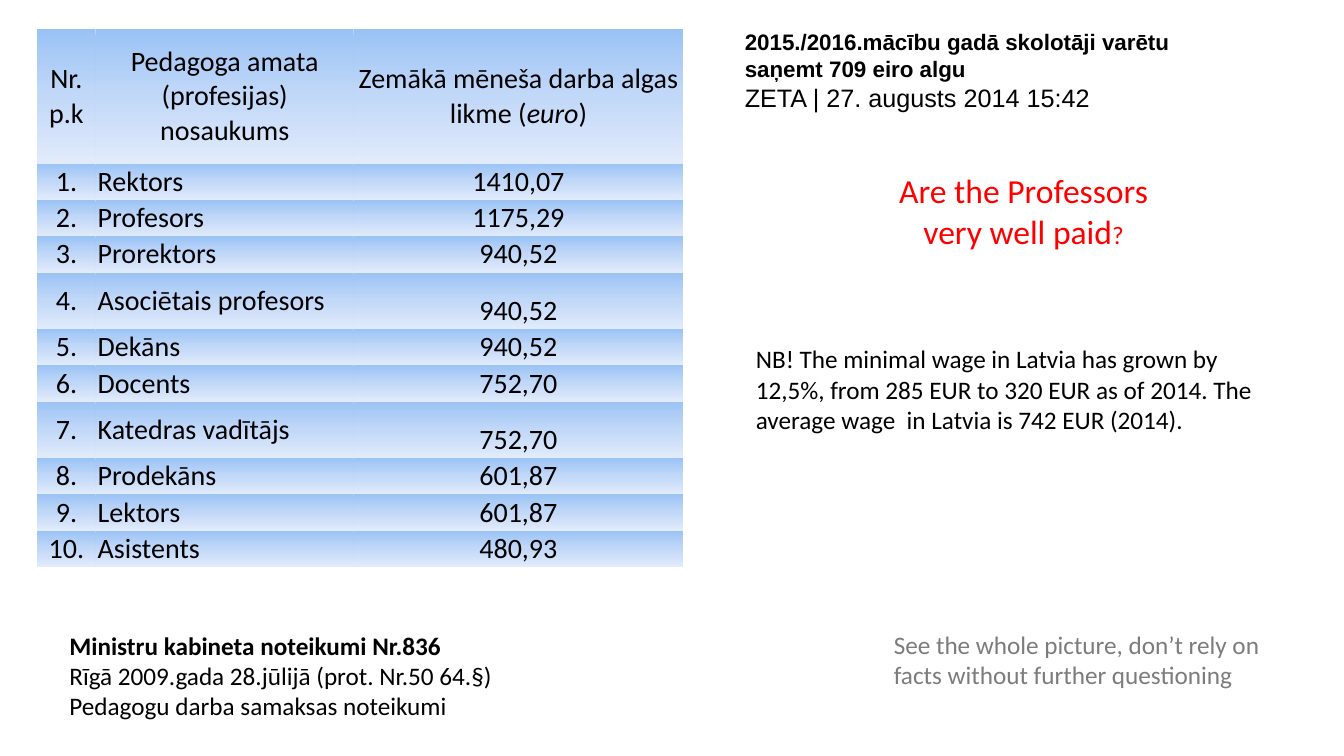
from pptx import Presentation
from pptx.dml.color import RGBColor
from pptx.enum.shapes import MSO_SHAPE as Preset
from pptx.enum.text import MSO_ANCHOR as Anchor, MSO_AUTO_SIZE as AutoSize, PP_ALIGN as Align
from pptx.oxml import parse_xml
from pptx.oxml.ns import nsdecls, qn
from pptx.util import Pt

PLAIN_TABLE = "{2D5ABB26-0587-4C30-8999-92F81FD0307C}"
CELL_STOPS = ((0, "9AC3F5"), (50, "C2D8F8"), (100, "E1EBFB"))
POSITIONS = (
    ("Rektors", "1410,07"),
    ("Profesors", "1175,29"),
    ("Prorektors", "940,52"),
    ("Asociētais profesors", "940,52"),
    ("Dekāns", "940,52"),
    ("Docents", "752,70"),
    ("Katedras vadītājs", "752,70"),
    ("Prodekāns", "601,87"),
    ("Lektors", "601,87"),
    ("Asistents", "480,93"),
)
TALL_ROWS = (4, 7)


def color(hex_value):
    return RGBColor.from_string(hex_value)


def apply_formats(target, formats):
    for name, value in formats.items():
        setattr(target, name, value)


class SlideBuilder:
    font_name = "Calibri"
    text_size = 18
    text_color = "000000"

    def __init__(self, slide):
        self.slide = slide

    def place(self, shape, box):
        names = ("left", "top", "width", "height")
        apply_formats(shape, dict(zip(names, map(Pt, box))))

    def fill_text(self, frame, paragraphs, align=Align.LEFT, anchor=Anchor.TOP, **style):
        apply_formats(frame, {"word_wrap": True, "vertical_anchor": anchor})
        for index, runs in enumerate(paragraphs):
            paragraph = frame.paragraphs[0] if index == 0 else frame.add_paragraph()
            paragraph.alignment = align
            for text, changes in runs:
                if text == "\n":
                    paragraph.add_line_break()
                    continue
                look = {**style, **changes}
                run = paragraph.add_run()
                run.text = text
                run.font.color.rgb = color(look.pop("color", self.text_color))
                look["size"] = Pt(look.get("size", self.text_size))
                apply_formats(run.font, {"name": self.font_name, "bold": False, **look})

    def title(self, box, paragraphs, **style):
        title = self.slide.shapes.title
        self.place(title, box)
        title.text_frame.auto_size = AutoSize.NONE
        self.fill_text(title.text_frame, paragraphs, **style)

    def text(self, box, paragraphs, **style):
        shape = self.slide.shapes.add_textbox(*map(Pt, box))
        self.fill_text(shape.text_frame, paragraphs, **style)

    def panel(self, box, fill, paragraphs, **style):
        shape = self.slide.shapes.add_shape(Preset.RECTANGLE, *map(Pt, box))
        shape.shadow.inherit = False
        shape.fill.solid()
        shape.fill.fore_color.rgb = color(fill)
        shape.line.fill.background()
        self.fill_text(shape.text_frame, paragraphs, **style)

    def gradient(self, cell):
        stops = "".join(
            f'<a:gs pos="{percent * 1000}"><a:srgbClr val="{value}"/></a:gs>'
            for percent, value in CELL_STOPS
        )
        cell._tc.get_or_add_tcPr().append(parse_xml(
            f'<a:gradFill {nsdecls("a")} rotWithShape="1"><a:gsLst>{stops}</a:gsLst>'
            '<a:lin ang="5400000" scaled="0"/></a:gradFill>'
        ))

    def table(self, left, top, widths, heights, rows, size):
        box = (left, top, sum(widths), sum(heights))
        table = self.slide.shapes.add_table(len(rows), len(widths), *map(Pt, box)).table
        table._tbl.tblPr.find(qn("a:tableStyleId")).text = PLAIN_TABLE
        apply_formats(table, {"first_row": False, "horz_banding": False})
        for column, width in zip(table.columns, widths):
            column.width = Pt(width)
        for row, height in zip(table.rows, heights):
            row.height = Pt(height)
        margins = {
            "margin_left": Pt(1.44), "margin_right": Pt(1.44),
            "margin_top": Pt(0.72), "margin_bottom": Pt(0.72),
        }
        for row_index, row in enumerate(rows):
            for column_index, runs in enumerate(row):
                cell = table.cell(row_index, column_index)
                is_body = row_index > 0
                align = Align.LEFT if is_body and column_index == 1 else Align.CENTER
                anchor = Anchor.BOTTOM if is_body and column_index == 2 else Anchor.MIDDLE
                self.fill_text(cell.text_frame, [runs], align=align, size=size)
                apply_formats(cell, {**margins, "vertical_anchor": anchor})
                self.gradient(cell)


def main():
    presentation = Presentation()
    apply_formats(presentation, {"slide_width": Pt(960), "slide_height": Pt(540)})
    builder = SlideBuilder(presentation.slides.add_slide(presentation.slide_layouts[5]))

    header = [
        [("Nr. p.k", {})],
        [("Pedagoga amata (profesijas) nosaukums", {})],
        [("Zemākā mēneša darba algas likme (", {}), ("euro", {"italic": True}), (")", {})],
    ]
    body = [
        [[(text, {})] for text in (f"{number}.", position, rate)]
        for number, (position, rate) in enumerate(POSITIONS, 1)
    ]
    heights = [96] + [40.3 if number in TALL_ROWS else 21 for number in range(1, len(body) + 1)]
    builder.table(26.6, 20.9, (41.8, 184.3, 235.4), heights, [header] + body, size=20)

    builder.title(
        (614.9, 118.1, 232.6, 65.5),
        [[("Are the Professors very well paid", {}), ("?", {"size": 18})]],
        align=Align.CENTER, size=24, color="FF0000",
    )
    builder.text(
        (532.8, 241.9, 389.5, 72.7),
        [[("NB! The minimal wage in Latvia has grown by 12,5%, from 285 EUR to 320 EUR "
           "as of 2014. The average wage  in Latvia is 742 EUR (2014).", {})]],
    )
    builder.text(
        (631.4, 445.7, 302.4, 51.1),
        [[("See the whole picture, don’t rely on facts without further questioning", {})]],
        color="7C7C7C",
    )
    builder.text(
        (42.5, 446.4, 480.2, 72.7),
        [
            [("Ministru kabineta noteikumi Nr.836 ", {"bold": True}), ("\n", {}),
             ("Rīgā 2009.gada 28.jūlijā (prot. Nr.50 64.§)", {})],
            [("Pedagogu darba samaksas noteikumi", {})],
        ],
    )
    builder.panel(
        (524.9, 16.6, 375.1, 67.7), "FFFFFF",
        [
            [("2015./2016.mācību gadā skolotāji varētu saņemt 709 eiro algu",
              {"size": 16, "bold": True})],
            [("ZETA | 27. augusts 2014 15:42", {})],
        ],
        anchor=Anchor.MIDDLE, name="Arial",
    )
    presentation.save("out.pptx")


if __name__ == "__main__":
    main()
